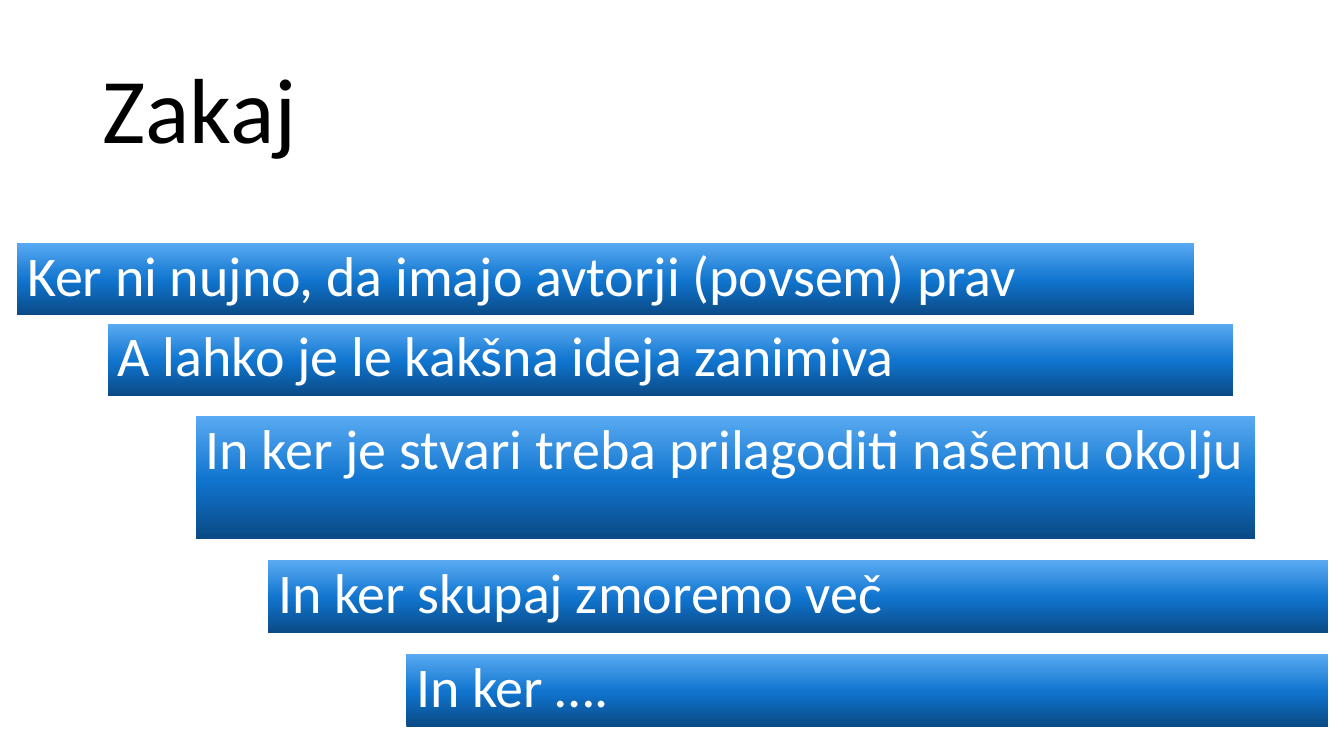
from copy import deepcopy
from dataclasses import dataclass

from pptx import Presentation
from pptx.dml.color import RGBColor
from pptx.enum.shapes import MSO_SHAPE
from pptx.enum.text import MSO_ANCHOR, PP_ALIGN
from pptx.oxml.ns import qn
from pptx.util import Inches, Pt


@dataclass(frozen=True)
class Theme:
    font: str = "Calibri"
    title_size: int = 66
    bar_size: int = 40
    title_color: str = "000000"
    bar_text_color: str = "FFFFFF"
    gradient: tuple = ((0, "0A4A85"), (0.48, "1074CE"), (1, "59AAF2"))
    line_spacing: float = 0.9


THEME = Theme()

REASONS = (
    ("Ker ni nujno, da imajo avtorji (povsem) prav", 0.17, 2.41, 11.67, 0.72),
    ("A lahko je le kakšna ideja zanimiva", 1.07, 3.21, 11.16, 0.72),
    ("In ker je stvari treba prilagoditi našemu okolju", 1.94, 4.13, 10.51, 1.22),
    ("In ker skupaj zmoremo več", 2.66, 5.56, 10.51, 0.72),
    ("In ker ….", 4.03, 6.49, 9.14, 0.72),
)


def write_text(shape, text, size, color, anchor):
    text_frame = shape.text_frame
    text_frame.text = text
    text_frame.word_wrap = True
    text_frame.vertical_anchor = anchor
    paragraph = text_frame.paragraphs[0]
    paragraph.alignment = PP_ALIGN.LEFT
    paragraph.line_spacing = THEME.line_spacing
    font = paragraph.runs[0].font
    font.name = THEME.font
    font.size = Pt(size)
    font.color.rgb = RGBColor.from_string(color)


def fill_gradient(shape):
    shape.fill.gradient()
    shape.fill.gradient_angle = 90
    stop_list = shape._element.spPr.find(qn("a:gradFill")).find(qn("a:gsLst"))
    stop_list.append(deepcopy(stop_list[0]))
    for stop, (position, color) in zip(shape.fill.gradient_stops, THEME.gradient):
        stop.position = position
        stop.color.rgb = RGBColor.from_string(color)


def add_title(slide, text):
    title = slide.shapes.add_textbox(Inches(0.92), Inches(0.4), Inches(11.5), Inches(1.45))
    write_text(title, text, THEME.title_size, THEME.title_color, MSO_ANCHOR.MIDDLE)


def add_bar(slide, text, left, top, width, height):
    bar = slide.shapes.add_shape(
        MSO_SHAPE.RECTANGLE, Inches(left), Inches(top), Inches(width), Inches(height)
    )
    bar.shadow.inherit = False
    bar.line.fill.background()
    fill_gradient(bar)
    write_text(bar, text, THEME.bar_size, THEME.bar_text_color, MSO_ANCHOR.TOP)


def main():
    presentation = Presentation()
    presentation.slide_width = Inches(13.33)
    presentation.slide_height = Inches(7.5)
    slide = presentation.slides.add_slide(presentation.slide_layouts[6])
    add_title(slide, "Zakaj")
    for reason in REASONS:
        add_bar(slide, *reason)
    presentation.save("out.pptx")


if __name__ == "__main__":
    main()
